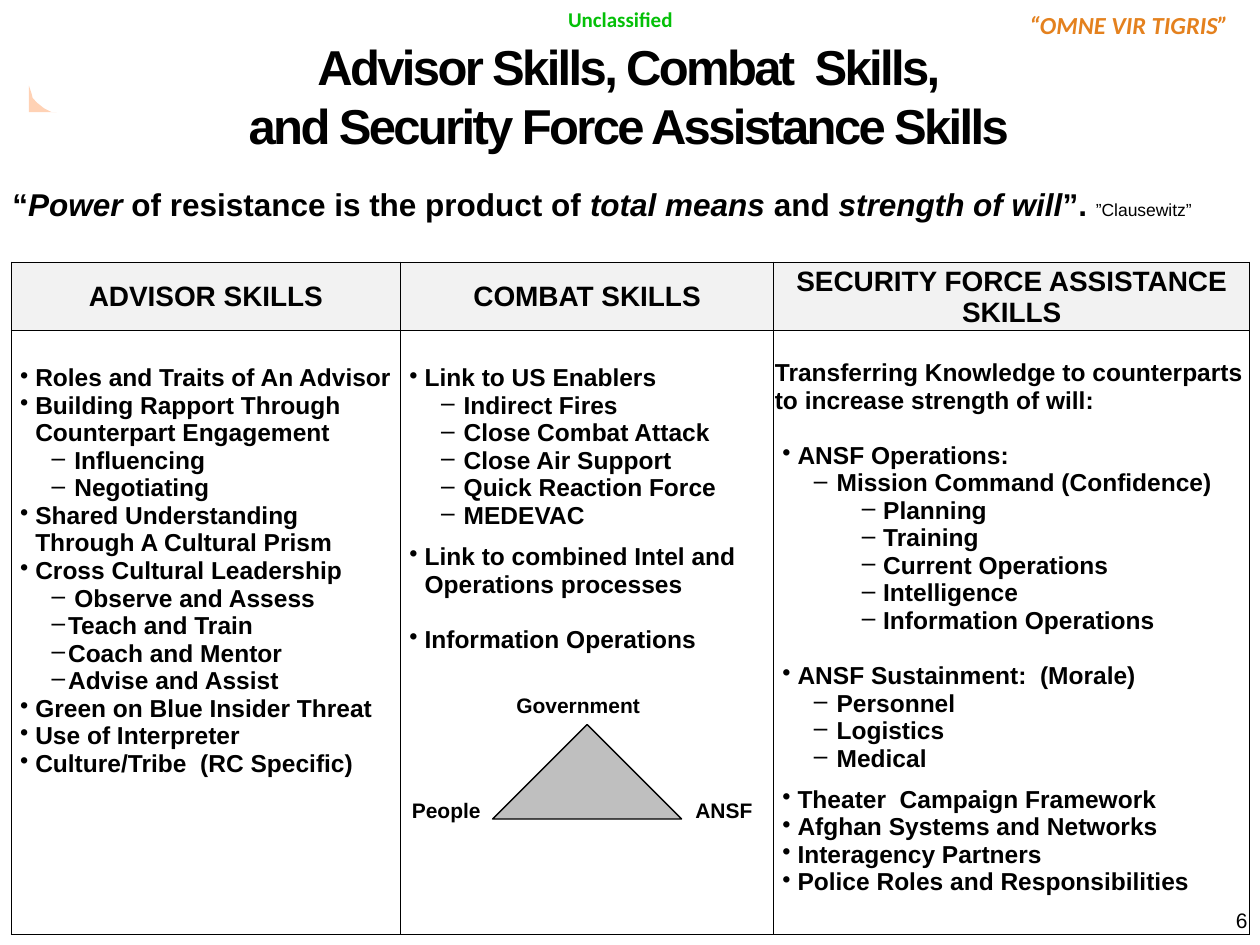
import pptx
import pptx.util
import pptx.dml.color
import pptx.enum.shapes
import pptx.enum.text
from dataclasses import dataclass
from lxml import etree
from pptx.oxml.ns import qn

Inches, Pt = pptx.util.Inches, pptx.util.Pt
ALIGN = pptx.enum.text.PP_ALIGN
ANCHOR = pptx.enum.text.MSO_ANCHOR
SHAPE = pptx.enum.shapes.MSO_SHAPE


@dataclass
class Level:
    mark: str
    left: float
    hang: float


@dataclass
class Item:
    text: str
    level: Level
    gap: float = 0


@dataclass
class Column:
    head: str
    width: float
    top: float
    items: list[Item]


@dataclass
class Label:
    text: str
    left: float
    top: float
    width: float


PLAIN = Level("", 0, 0)
MAIN = Level("•", 0.18, 0.12)
SUB = Level("–", 0.49, 0.18)
TIGHT = Level("–", 0.44, 0.13)
DEEP = Level("–", 0.86, 0.17)
HALF, LINE = 7.8, 15.7  # gaps between groups, in points


def group(level: Level, *texts: str, gap: float = 0) -> list[Item]:
    """Items of one level; the gap goes above the first."""
    return [Item(t, level, 0 if i else gap) for i, t in enumerate(texts)]


COLUMNS = [
    Column("ADVISOR SKILLS", 3.09, 0.27, [
        *group(MAIN, "Roles and Traits of An Advisor",
               "Building Rapport Through Counterpart Engagement"),
        *group(SUB, "Influencing", "Negotiating"),
        *group(MAIN, "Shared Understanding Through A Cultural Prism",
               "Cross Cultural Leadership"),
        *group(SUB, "Observe and Assess"),
        *group(TIGHT, "Teach and Train", "Coach and Mentor", "Advise and Assist"),
        *group(MAIN, "Green on Blue Insider Threat", "Use of Interpreter",
               "Culture/Tribe  (RC Specific)"),
    ]),
    Column("COMBAT SKILLS", 2.96, 0.27, [
        *group(MAIN, "Link to US Enablers"),
        *group(SUB, "Indirect Fires", "Close Combat Attack", "Close Air Support",
               "Quick Reaction Force", "MEDEVAC"),
        *group(MAIN, "Link to combined Intel and Operations processes", gap=HALF),
        *group(MAIN, "Information Operations", gap=LINE),
    ]),
    Column("SECURITY FORCE ASSISTANCE SKILLS", 3.78, 0.23, [
        *group(PLAIN, "Transferring Knowledge to counterparts "
               "to increase strength of will:"),
        *group(MAIN, "ANSF Operations:", gap=LINE),
        *group(SUB, "Mission Command (Confidence)"),
        *group(DEEP, "Planning", "Training", "Current Operations",
               "Intelligence", "Information Operations"),
        *group(MAIN, "ANSF Sustainment:  (Morale)", gap=LINE),
        *group(SUB, "Personnel", "Logistics", "Medical"),
        *group(MAIN, "Theater  Campaign Framework", "Afghan Systems and Networks",
               "Interagency Partners", "Police Roles and Responsibilities", gap=HALF),
    ]),
]

LABELS = [
    Label("Government", 4, 5.45, 1.33),
    Label("ANSF", 5.42, 6.28, 0.75),
    Label("People", 3.17, 6.28, 0.75),
]

QUOTE = [("“", False), ("Power", True), (" of resistance is the product of ", False),
         ("total means", True), (" and ", False), ("strength of will", True),
         ("”. ", False)]


def color(code: str):
    return pptx.dml.color.RGBColor.from_string(code)


def paint(fill, code: str) -> None:
    fill.solid()
    fill.fore_color.rgb = color(code)


def write(par, text: str, size: float = 12, bold: bool = True, italic: bool = False,
          ink: str = "000000", face: str = "Arial", track: float = 0,
          align=ALIGN.LEFT) -> None:
    """Add one run of formatted text to a paragraph."""
    par.alignment = align
    run = par.add_run()
    run.text = text
    font = run.font
    font.name, font.size, font.bold, font.italic = face, Pt(size), bold, italic
    font.color.rgb = color(ink)
    if track:
        font._element.set("spc", str(int(track * 100)))


def box(slide, left: float, top: float, width: float, height: float,
        wrap: bool = True, anchor=ANCHOR.TOP):
    """Add an empty text box and return its frame."""
    shape = slide.shapes.add_textbox(Inches(left), Inches(top),
                                     Inches(width), Inches(height))
    frame = shape.text_frame
    frame.word_wrap, frame.vertical_anchor = wrap, anchor
    return frame


def indent(par, item: Item) -> None:
    """Set gap, hanging indent and bullet of a list paragraph."""
    if item.gap:
        par.space_before = Pt(item.gap)
    if item.level.mark:
        prop = par._p.get_or_add_pPr()
        prop.set("marL", str(Inches(item.level.left)))
        prop.set("indent", str(-Inches(item.level.hang)))
        etree.SubElement(prop, qn("a:buChar"), char=item.level.mark)


def style(cell, fill: str, top: float = 0.01) -> None:
    """Set fill, margins and thin black borders of a cell."""
    paint(cell.fill, fill)
    cell.margin_left = cell.margin_right = Inches(0.01)
    cell.margin_top, cell.margin_bottom = Inches(top), 0
    prop = cell._tc.get_or_add_tcPr()
    for i, side in enumerate(("lnL", "lnR", "lnT", "lnB")):
        line = etree.Element(qn("a:" + side), w=str(Pt(0.5)))
        solid = etree.SubElement(line, qn("a:solidFill"))
        etree.SubElement(solid, qn("a:srgbClr"), val="000000")
        prop.insert(i, line)


def grid(slide, cols: list[Column]) -> None:
    table = slide.shapes.add_table(2, len(cols), Inches(0.09), Inches(2.08),
                                   Inches(9.83), Inches(5.33)).table
    table.horz_banding = False
    table.rows[0].height, table.rows[1].height = Inches(0.54), Inches(4.79)
    for i, col in enumerate(cols):
        table.columns[i].width = Inches(col.width)
        head, body = table.cell(0, i), table.cell(1, i)
        style(head, "F2F2F2")
        head.vertical_anchor = ANCHOR.MIDDLE
        write(head.text_frame.paragraphs[0], col.head, size=16, align=ALIGN.CENTER)
        style(body, "FFFFFF", col.top)
        frame = body.text_frame
        for n, item in enumerate(col.items):
            par = frame.add_paragraph() if n else frame.paragraphs[0]
            indent(par, item)
            write(par, item.text, size=14)


def corner(slide) -> None:
    """Pale orange curved wedge at the left edge."""
    pts = [(0.23, 0.89), (0.45, 0.89), (0.41, 0.89), (0.35, 0.86), (0.3, 0.82),
           (0.26, 0.78), (0.25, 0.74)]
    path = slide.shapes.build_freeform(Inches(0.23), Inches(0.68))
    path.add_line_segments([(Inches(x), Inches(y)) for x, y in pts])
    wedge = path.convert_to_shape()
    wedge.shadow.inherit = False
    paint(wedge.fill, "FF6600")
    tint = wedge._element.spPr.find(".//" + qn("a:srgbClr"))
    etree.SubElement(tint, qn("a:alpha"), val="29000")
    wedge.line.fill.background()


def main() -> None:
    deck = pptx.Presentation()
    deck.slide_width, deck.slide_height = Inches(10), Inches(7.5)
    slide = deck.slides.add_slide(deck.slide_layouts[6])

    # Marking, motto and wedge
    write(box(slide, 4.41, 0, 1.18, 0.3, wrap=False).paragraphs[0],
          "Unclassified", ink="04C008", face="Calibri")
    write(box(slide, 7.92, 0.03, 2.08, 0.34).paragraphs[0], "“OMNE VIR TIGRIS”",
          size=14, italic=True, ink="E4811E", face="Calibri", align=ALIGN.CENTER)
    corner(slide)

    # Title
    title = box(slide, 0.03, 0.42, 9.92, 0.67, anchor=ANCHOR.MIDDLE)
    for par, text in ((title.paragraphs[0], "Advisor Skills, Combat  Skills,"),
                      (title.add_paragraph(), "and Security Force Assistance Skills")):
        write(par, text, size=28, track=-1.5, align=ALIGN.CENTER)

    # Skills table
    grid(slide, COLUMNS)

    # Triangle with its labels
    tri = slide.shapes.add_shape(SHAPE.ISOSCELES_TRIANGLE, Inches(3.91), Inches(5.75),
                                 Inches(1.5), Inches(0.75))
    tri.shadow.inherit = False
    paint(tri.fill, "BFBFBF")
    paint(tri.line.fill, "000000")
    tri.line.width = Pt(0.75)
    for tag in LABELS:
        write(box(slide, tag.left, tag.top, tag.width, 0.3).paragraphs[0], tag.text)

    # Quote and page number
    quote = box(slide, 0, 1.42, 10, 0.4).paragraphs[0]
    for text, slant in QUOTE:
        write(quote, text, size=18, italic=slant)
    write(quote, "”Clausewitz”", size=10, bold=False)
    write(box(slide, 7.67, 7.1, 2.33, 0.4, anchor=ANCHOR.MIDDLE).paragraphs[0],
          "6", bold=False, align=ALIGN.RIGHT)

    deck.save("out.pptx")


if __name__ == "__main__":
    main()
